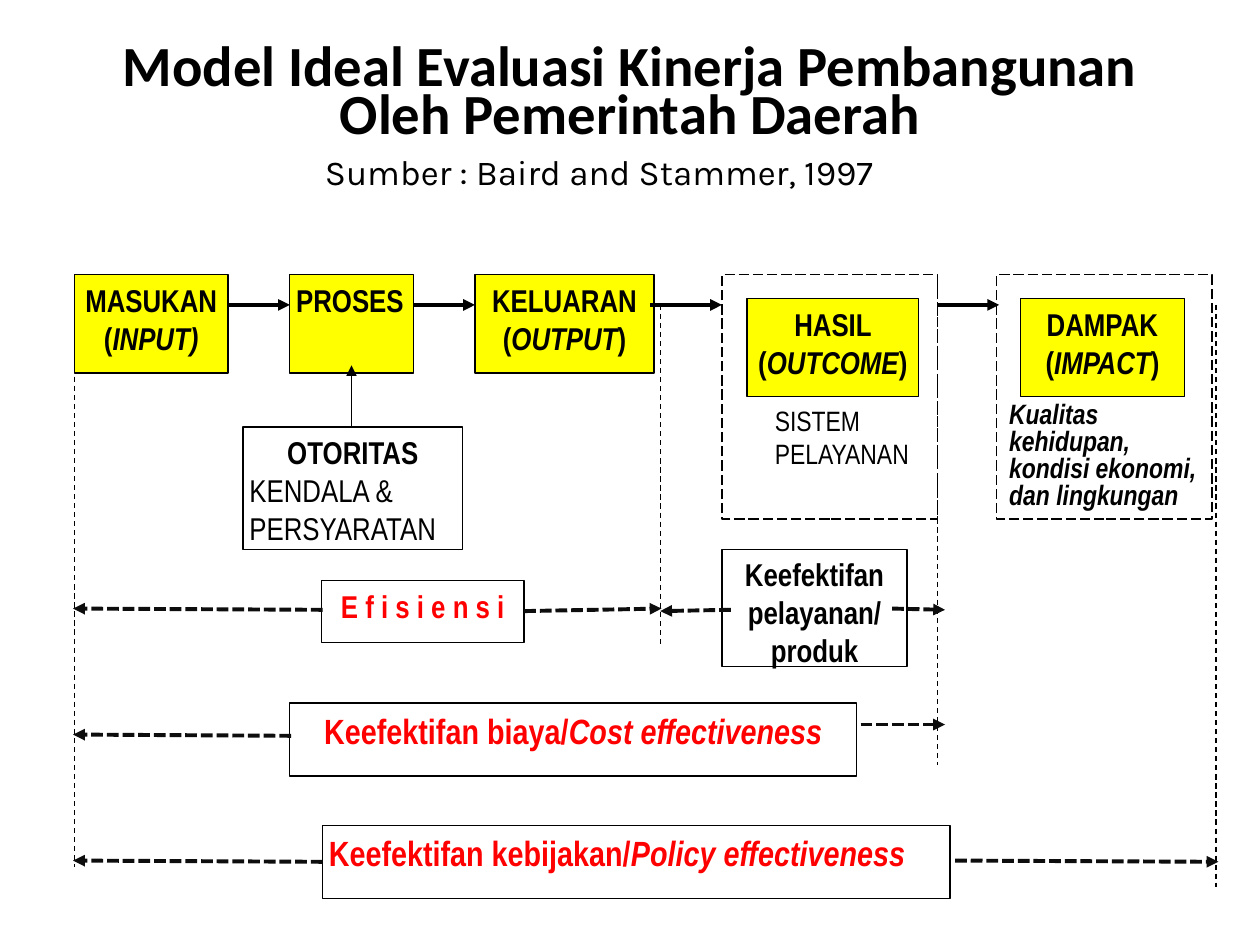
from pptx import Presentation
from pptx.dml.color import RGBColor
from pptx.enum.dml import MSO_LINE
from pptx.enum.shapes import MSO_CONNECTOR, MSO_SHAPE
from pptx.enum.text import MSO_ANCHOR, PP_ALIGN
from pptx.oxml.ns import qn
from pptx.util import Inches, Pt
from lxml.etree import SubElement

COLOURS = {"ink": "000000", "arrow": "0D0D0D", "yellow": "FFFF00", "red": "FF0000"}
COLUMNS, ROWS = 100, 75


def colour(name):
    return RGBColor.from_string(COLOURS[name])


def assign(target, values):
    for name, value in values.items():
        setattr(target, name, value)


class Diagram:
    style = {"name": "Arial Narrow", "size": 18, "bold": True, "italic": False, "colour": "ink"}

    def __init__(self, deck):
        self.deck = deck
        self.page = deck.slides.add_slide(deck.slide_layouts[6])

    def place(self, column, row):
        return (int(self.deck.slide_width * column / COLUMNS),
                int(self.deck.slide_height * row / ROWS))

    def area(self, at):
        return *self.place(*at[:2]), *self.place(*at[2:])

    def set_words(self, shape, paragraphs, align=PP_ALIGN.CENTER, spacing=None,
                  margins=(0.05, 0.05), anchor=MSO_ANCHOR.TOP, wrap=True, **style):
        frame = shape.text_frame
        side, edge = map(Inches, margins)
        assign(frame, {"word_wrap": wrap, "vertical_anchor": anchor,
                       "margin_left": side, "margin_right": side,
                       "margin_top": edge, "margin_bottom": edge})
        for index, item in enumerate(paragraphs):
            content, changes = item if isinstance(item, tuple) else (item, {})
            look = {**self.style, "align": align, **style, **changes}
            para = frame.paragraphs[0] if index == 0 else frame.add_paragraph()
            assign(para, {"alignment": look["align"], "line_spacing": spacing})
            for part, words in enumerate(content.split("*")):
                if words:
                    span = para.add_run()
                    span.text = words
                    assign(span.font, {"name": look["name"], "size": Pt(look["size"]),
                                       "bold": look["bold"],
                                       "italic": look["italic"] or part % 2 == 1})
                    span.font.color.rgb = colour(look["colour"])

    def text(self, at, paragraphs, **style):
        self.set_words(self.page.shapes.add_textbox(*self.area(at)), paragraphs, **style)

    def box(self, at, paragraphs=(), fill=None, dash=None, **style):
        box = self.page.shapes.add_shape(MSO_SHAPE.RECTANGLE, *self.area(at))
        box.shadow.inherit = False
        if fill:
            box.fill.solid()
            box.fill.fore_color.rgb = colour(fill)
        else:
            box.fill.background()
        box.line.color.rgb = colour("ink")
        assign(box.line, {"width": Pt(0.75), "dash_style": dash})
        self.set_words(box, paragraphs, **style)

    def line(self, start, end, ink="ink", width=0.75, dash=None, arrow=False):
        line = self.page.shapes.add_connector(
            MSO_CONNECTOR.STRAIGHT, *self.place(*start), *self.place(*end))
        line.line.color.rgb = colour(ink)
        assign(line.line, {"width": Pt(width), "dash_style": dash})
        properties = line._element.spPr
        if arrow:
            SubElement(properties.find(qn("a:ln")), qn("a:tailEnd"), type="triangle")
        SubElement(properties, qn("a:effectLst"))


def main():
    deck = Presentation()
    assign(deck, {"slide_width": Inches(10), "slide_height": Inches(7.5)})
    diagram = Diagram(deck)
    left, middle = PP_ALIGN.LEFT, MSO_ANCHOR.MIDDLE
    top, inner, height = 21.8, 23.7, 7.8

    diagram.text((5, 3, 90, 9.3),
                 ["Model Ideal Evaluasi Kinerja Pembangunan Oleh Pemerintah Daerah"],
                 name="Calibri", size=32.4, spacing=0.7, margins=(0.1, 0.05), anchor=middle)
    for column in (57.3, 79.1):
        diagram.box((column, top, 17.1, 19.4), dash=MSO_LINE.LONG_DASH)

    stages = [
        (59.3, inner, 13.6, ["HASIL (*OUTCOME*)"], {}),
        (81, inner, 13, ["DAMPAK", "(*IMPACT*)"], {"margins": (0, 0.05)}),
        (5.9, top, 12.2, ["MASUKAN (*INPUT)*"], {}),
        (23, top, 9.8, ["PROSES"], {"align": left}),
        (37.7, top, 14.2, ["KELUARAN (*OUTPUT*)"], {}),
    ]
    for column, row, width, words, style in stages:
        diagram.box((column, row, width, height), words, fill="yellow", **style)

    diagram.text((61, 31.5, 12.6, 7.8), ["SISTEM PELAYANAN"], align=left, size=16, bold=False)
    diagram.text((80.1, 31.5, 16.2, 9.7),
                 ["Kualitas kehidupan, kondisi ekonomi, dan lingkungan"],
                 align=left, size=16, italic=True, spacing=0.8, margins=(0, 0.05))
    diagram.box((19.3, 33.9, 17.4, 9.7),
                ["OTORITAS", ("KENDALA & PERSYARATAN", {"align": left, "bold": False})])

    for start, end in ((18.1, 23), (32.8, 37.7), (51.6, 57.3), (74.4, 79.3)):
        diagram.line((start, 24.2), (end, 24.2), width=2.25, arrow=True)
    diagram.line((27.9, 33.9), (27.9, 29), arrow=True)

    for column, start, end in ((5.9, 29.9, 68.8), (52.4, 24.2, 51.4),
                               (74.4, top, 60.7), (96.5, 24.2, 70.4)):
        diagram.line((column, start), (column, end), dash=MSO_LINE.DASH)

    diagram.box((57.3, 43.6, 14.7, 9.3), ["Keefektifan pelayanan/", "produk"])
    diagram.box((25.5, 46.1, 16.1, 4.9), ["E f i s i e n s i"], colour="red")
    diagram.box((23, 55.8, 45, 5.8), ["Keefektifan biaya/*Cost effectiveness*"],
                size=20, colour="red")
    diagram.box((25.6, 65.5, 49.8, 5.8), ["Keefektifan kebijakan/*Policy effectiveness*"],
                align=left, size=20, colour="red")
    diagram.text((24.8, 11.5, 45.9, 4.3), ["Sumber : Baird and Stammer, 1997"],
                 align=left, name="Karla", size=20, bold=False, wrap=False,
                 margins=(0.1, 0.05), anchor=middle)

    spans = [
        ((41.6, 48.5), (52.5, 48.3)), ((58, 48.4), (52.4, 48.5)),
        ((23.1, 58.4), (5.8, 58.3)), ((25.6, 68.4), (5.8, 68.3)),
        ((68.3, 57.5), (75, 57.5)), ((70.8, 48.3), (75, 48.4)),
        ((25.6, 48.4), (5.8, 48.3)), ((75.8, 68.3), (96.7, 68.4)),
    ]
    for start, end in spans:
        diagram.line(start, end, ink="arrow", width=2.25, dash=MSO_LINE.SQUARE_DOT, arrow=True)

    deck.save("out.pptx")


if __name__ == "__main__":
    main()
